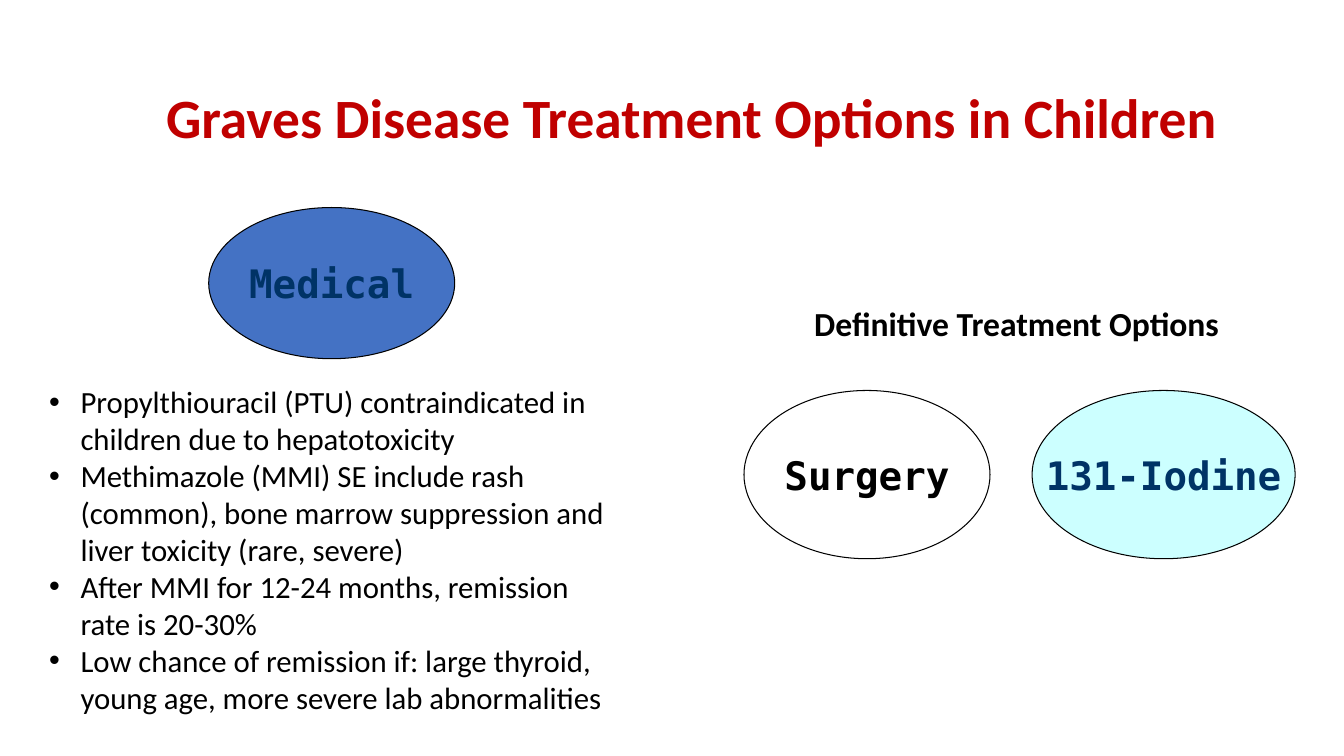
"""Build a slide on treatment options for Graves disease in children."""
from lxml import etree
from pptx import Presentation
from pptx.dml.color import RGBColor
from pptx.enum.shapes import MSO_SHAPE
from pptx.enum.text import MSO_ANCHOR, PP_ALIGN
from pptx.oxml.ns import qn
from pptx.util import Cm, Pt

OVAL = MSO_SHAPE.OVAL
MIDDLE, BOTTOM = MSO_ANCHOR.MIDDLE, MSO_ANCHOR.BOTTOM
CENTER = PP_ALIGN.CENTER


def rgb(value):
    return RGBColor.from_string(value)


def style(p, name, size, color, bold=False):
    for r in p.runs:
        r.font.name = name
        r.font.size = Pt(size)
        r.font.bold = bold
        r.font.color.rgb = rgb(color)


prs = Presentation()
prs.slide_width, prs.slide_height = Cm(33.87), Cm(19.05)
s = prs.slides.add_slide(prs.slide_layouts[6])

options = [
    ("Medical", 5.26, 5.23, 6.2, 3.81, "4472C4", "003366"),
    ("Surgery", 18.75, 9.84, 6.2, 4.24, None, "000000"),
    ("131-Iodine", 26.01, 9.84, 6.63, 4.24, "CCFFFF", "003366"),
]
for label, left, top, width, height, fill, color in options:
    sp = s.shapes.add_shape(OVAL, Cm(left), Cm(top), Cm(width), Cm(height))
    sp.shadow.inherit = False
    if fill:
        sp.fill.solid()
        sp.fill.fore_color.rgb = rgb(fill)
    else:
        sp.fill.background()
    sp.line.color.rgb = rgb("000000")
    sp.line.width = Pt(0.75)
    tf = sp.text_frame
    tf.text = label
    tf.word_wrap = False
    tf.vertical_anchor = MIDDLE
    p = tf.paragraphs[0]
    p.alignment = CENTER
    style(p, "DejaVu Sans Mono", 28, color, True)

title = s.shapes.add_textbox(Cm(3.5), Cm(0.81), Cm(27.86), Cm(3.18))
tf = title.text_frame
tf.text = "Graves Disease Treatment Options in Children"
tf.word_wrap = True
tf.vertical_anchor = BOTTOM
tf.margin_bottom = Cm(0.2)
p = tf.paragraphs[0]
p.alignment = CENTER
p.line_spacing = 0.9
style(p, "Calibri", 39.6, "C00000", True)

facts = [
    "Propylthiouracil (PTU) contraindicated in children due to hepatotoxicity",
    "Methimazole (MMI) SE include rash (common), bone marrow suppression and liver toxicity (rare, severe)",
    "After MMI for 12-24 months, remission rate is 20-30%",
    "Low chance of remission if: large thyroid, young age, more severe lab abnormalities",
]
notes = s.shapes.add_textbox(Cm(0.99), Cm(9.53), Cm(14.73), Cm(8.71))
tf = notes.text_frame
tf.text = "\n".join(facts)
tf.word_wrap = True
for p in tf.paragraphs:
    pPr = p._p.get_or_add_pPr()
    pPr.set("marL", str(Cm(0.79)))
    pPr.set("indent", str(-Cm(0.79)))
    etree.SubElement(pPr, qn("a:buFont"), typeface="Arial")
    etree.SubElement(pPr, qn("a:buChar"), char="•")
    style(p, "Calibri", 22, "000000")

heading = s.shapes.add_textbox(Cm(20.27), Cm(7.52), Cm(11.48), Cm(1.27))
tf = heading.text_frame
tf.text = "Definitive Treatment Options"
tf.word_wrap = True
style(tf.paragraphs[0], "Calibri", 24, "000000", True)

prs.save("out.pptx")
